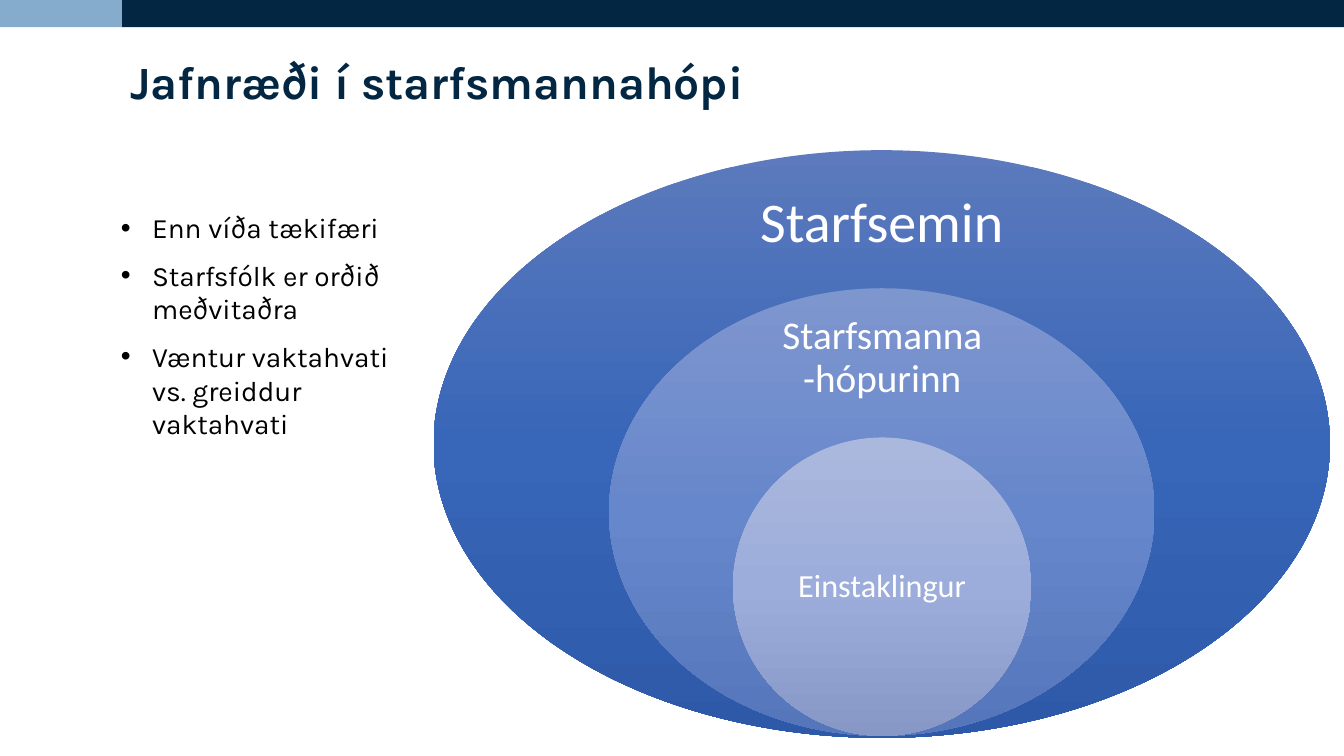
import copy

import pptx
import pptx.dml.color
import pptx.enum.shapes
import pptx.enum.text
import pptx.oxml.ns
import pptx.util
from pptx.util import Inches

HUES = {"navy": "032742", "sky": "85ABCD", "black": "000000", "white": "FFFFFF"}
SHAPE = pptx.enum.shapes.MSO_SHAPE
ALIGN = pptx.enum.text.PP_ALIGN
ANCHOR = pptx.enum.text.MSO_ANCHOR
RINGS = [
    ("Starfsemin", 40, 0.31, (4.3, 1.49, 8.89, 5.83), (7.19, 1.79, 3.11, 0.88),
     ("5C7ABD", "3866B8", "2D59A8")),
    ("Starfsmanna-hópurinn", 28, 0.22, (6.04, 2.86, 5.41, 4.44), (7.49, 3.14, 2.52, 0.83),
     ("7E96CE", "6787CC", "5676BB")),
    ("Einstaklingur", 23, 0.18, (7.27, 4.34, 2.96, 2.96), (7.7, 5.08, 2.1, 1.48),
     ("ABB8DD", "9CADDB", "8798C6")),
]
POINTS = [
    "Enn víða tækifæri",
    "Starfsfólk er orðið meðvitaðra",
    "Væntur vaktahvati vs. greiddur vaktahvati",
]


def color(code):
    return pptx.dml.color.RGBColor.from_string(code)


def place(item, area):
    item.left, item.top, item.width, item.height = map(Inches, area)


def write(item, *lines, size, hue, font="Karla", bold=False, align=ALIGN.LEFT,
          anchor=ANCHOR.TOP, inset=None, pitch=0.9, before=0, bullet=False):
    frame = item.text_frame
    frame.word_wrap = True
    frame.auto_size = pptx.enum.text.MSO_AUTO_SIZE.NONE
    frame.vertical_anchor = anchor
    if inset is not None:
        frame.margin_left = frame.margin_right = Inches(inset)
        frame.margin_top = frame.margin_bottom = Inches(inset)
    frame.text = "\n".join(lines)
    for para in frame.paragraphs:
        para.alignment = align
        para.line_spacing = pitch
        para.space_before = pptx.util.Pt(before)
        style = para.runs[0].font
        style.name, style.size, style.bold = font, pptx.util.Pt(size), bold
        style.color.rgb = color(HUES[hue])
        if bullet:
            props = para._p.get_or_add_pPr()
            props.set("marL", str(Inches(0.31)))
            props.set("indent", str(-Inches(0.31)))
            for tag, key, value in (("a:buFont", "typeface", "Arial"), ("a:buChar", "char", "•")):
                mark = pptx.oxml.ns.qn(tag)
                props.makeelement(mark)
                node = props.makeelement(mark, {key: value})
                props.append(node)


def form(slide, kind, area):
    item = slide.shapes.add_shape(kind, *map(Inches, area))
    item.shadow.inherit = False
    item.line.fill.background()
    return item


def bar(slide, area, hue):
    item = form(slide, SHAPE.RECTANGLE, area)
    item.fill.solid()
    item.fill.fore_color.rgb = color(HUES[hue])


def oval(slide, area, shades):
    item = form(slide, SHAPE.OVAL, area)
    item.fill.gradient()
    item.fill.gradient_angle = 270
    stops = item._element.spPr.find(".//" + pptx.oxml.ns.qn("a:gsLst"))
    stops.insert(1, copy.deepcopy(stops[0]))
    for stop, shade, spot in zip(item.fill.gradient_stops, shades, (0, 0.5, 1)):
        stop.color.rgb = color(shade)
        stop.position = spot


def box(slide, area, *lines, **style):
    write(slide.shapes.add_textbox(*map(Inches, area)), *lines, **style)


def main():
    deck = pptx.Presentation()
    deck.slide_width, deck.slide_height = Inches(13.33), Inches(7.5)
    slide = deck.slides.add_slide(deck.slide_layouts[5])
    bar(slide, (1.21, 0, 12.12, 0.27), "navy")
    bar(slide, (0, 0, 1.21, 0.27), "sky")
    title = slide.shapes.title
    place(title, (1.19, 0.54, 10.83, 0.86))
    write(title, "Jafnræði í starfsmannahópi", size=33, hue="navy", bold=True)
    box(slide, (1.1, 2.04, 2.97, 5.02), *POINTS, size=20, hue="black",
        pitch=pptx.util.Pt(24), before=10, bullet=True)
    for label, size, inset, area, spot, shades in RINGS:
        oval(slide, area, shades)
        box(slide, spot, label, size=size, hue="white", font="Calibri",
            align=ALIGN.CENTER, anchor=ANCHOR.MIDDLE, inset=inset)
    deck.save("out.pptx")


if __name__ == "__main__":
    main()
